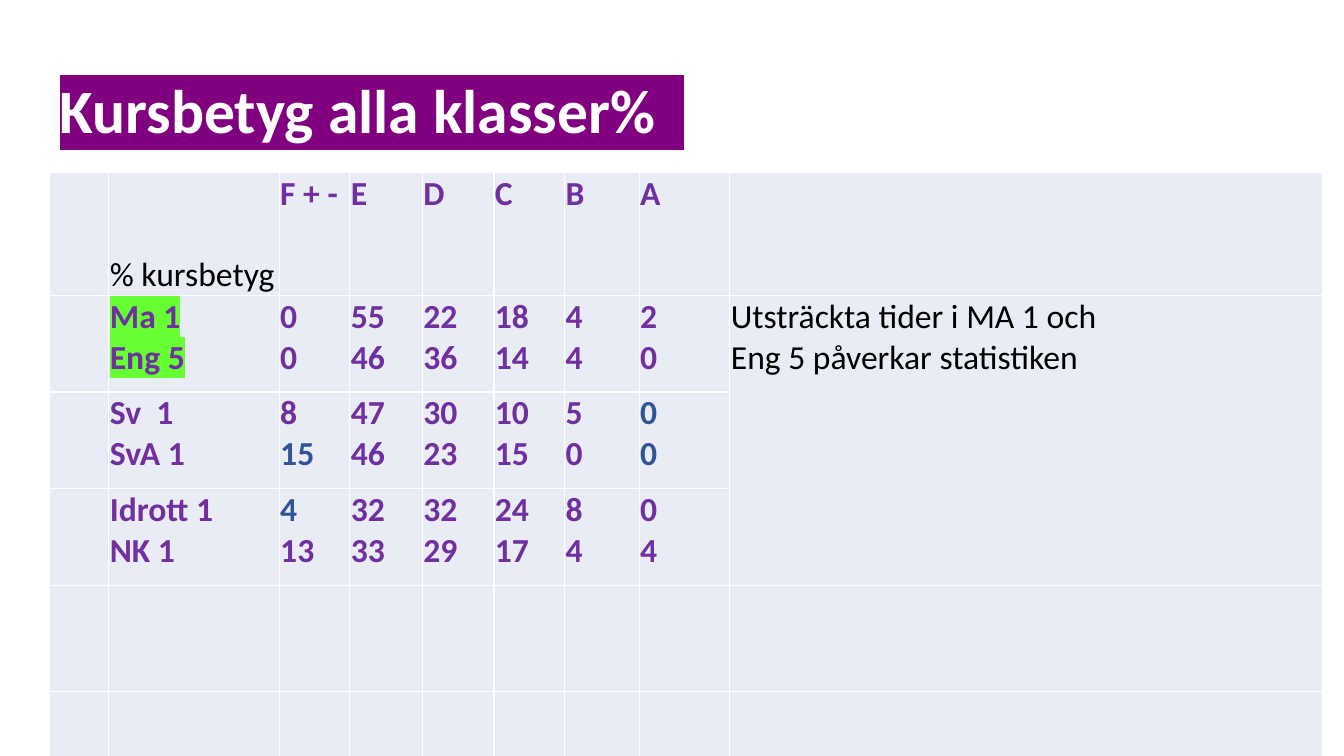
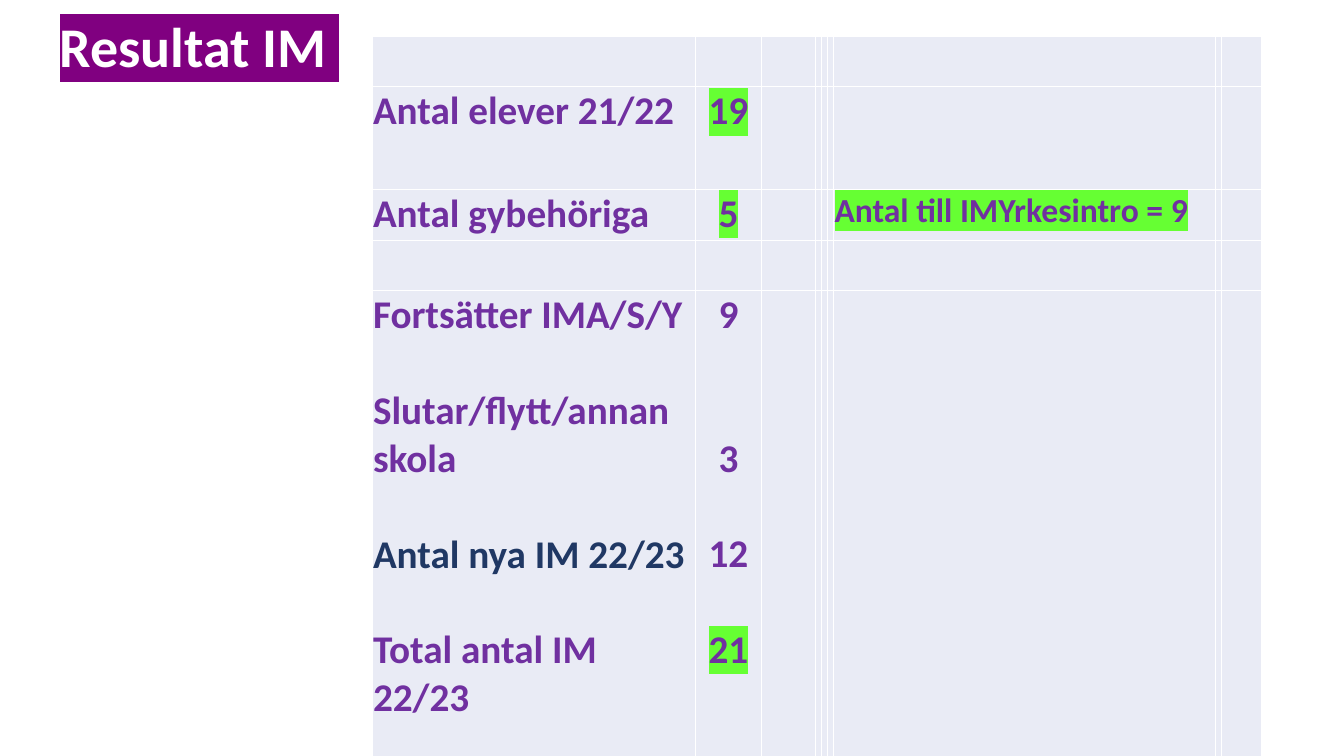
from dataclasses import dataclass
from functools import partial

from lxml import etree
from pptx import Presentation
from pptx.dml.color import RGBColor
from pptx.enum.text import MSO_ANCHOR, PP_ALIGN
from pptx.oxml.ns import qn
from pptx.util import Inches, Pt

FONT = "Calibri"
WHITE, BLACK = "FFFFFF", "000000"
TITLE_BAND, TITLE_GAP = "800080", "990099"
PURPLE, BLUE, NAVY = "7030A0", "2F5597", "203864"
GREEN, CELL_FILL = "66FF33", "E9EBF5"
BLANK_LINE = 34.2  # height in points of one 28 pt line


@dataclass
class Line:
    text: str
    size: float = 24
    color: str = PURPLE
    bold: bool = True
    highlight: str = ""
    align: PP_ALIGN = PP_ALIGN.LEFT
    before: float = 0


blue = partial(Line, color=BLUE)
marked = partial(Line, highlight=GREEN)
plain = partial(Line, color=BLACK, bold=False)
label = partial(Line, size=28)
count = partial(label, align=PP_ALIGN.CENTER)


def rgb(value):
    return RGBColor.from_string(value)


def add_color(parent, value):
    etree.SubElement(parent, qn("a:srgbClr"), val=value)


def add_run(p, text, size, color, bold=True, highlight=""):
    r = p.add_run()
    r.text = text
    r.font.size = Pt(size)
    r.font.bold = bold
    r.font.color.rgb = rgb(color)
    if highlight:
        add_color(etree.SubElement(r.font._element, qn("a:highlight")), highlight)
    r.font.name = FONT


def add_titled_slide(prs, top, height, size, runs):
    s = prs.slides.add_slide(prs.slide_layouts[5])
    title = s.shapes.title
    title.left, title.top = Inches(0.49), Inches(top)
    title.width, title.height = Inches(11.92), Inches(height)
    tf = title.text_frame
    tf.vertical_anchor = MSO_ANCHOR.MIDDLE
    p = tf.paragraphs[0]
    p.alignment = PP_ALIGN.LEFT
    p.line_spacing = 0.9
    for text, color in runs:
        add_run(p, text, size, color, highlight=TITLE_BAND)
    return s


def format_cell(cell):
    cell.margin_left = cell.margin_right = cell.margin_top = Inches(0.01)
    cell.margin_bottom = 0
    cell.text_frame.paragraphs[0].font.size = Pt(12)
    tc_pr = cell._tc.get_or_add_tcPr()
    for side in ("a:lnL", "a:lnR", "a:lnT", "a:lnB"):
        ln = etree.SubElement(tc_pr, qn(side), w=str(Pt(1)))
        add_color(etree.SubElement(ln, qn("a:solidFill")), WHITE)
    cell.fill.solid()
    cell.fill.fore_color.rgb = rgb(CELL_FILL)


def add_grid(s, left, top, widths, heights):
    """Add an empty table with the shared fill and borders."""
    frame = s.shapes.add_table(len(heights), len(widths), Inches(left), Inches(top),
                               Inches(sum(widths)), Inches(sum(heights)))
    table = frame.table
    table.first_row = table.horz_banding = False
    for column, width in zip(table.columns, widths):
        column.width = Inches(width)
    for row, height in zip(table.rows, heights):
        row.height = Inches(height)
    for cell in table.iter_cells():
        format_cell(cell)
    return table


def write_cell(cell, *lines):
    tf = cell.text_frame
    for i, line in enumerate(lines):
        p = tf.add_paragraph() if i else tf.paragraphs[0]
        p.alignment = line.align
        if line.before:
            p.space_before = Pt(line.before)
        for j, part in enumerate(line.text.split("\n")):
            if j:
                p.add_line_break()
            add_run(p, part, line.size, line.color, line.bold, line.highlight)


def build_grades(prs):
    s = add_titled_slide(prs, 0.4, 1.45, 44, [
        ("Kursbetyg", WHITE), (" ", TITLE_GAP), ("alla klasser%  ", WHITE)])
    table = add_grid(s, 0.49, 1.71,
                     [0.59, 1.69, 0.7, 0.72, 0.71, 0.7, 0.74, 0.9, 5.88],
                     [1.22, 0.96, 0.96, 0.96, 1.05, 0.77])
    write_cell(table.cell(0, 1), plain("% kursbetyg"))
    table.cell(0, 1).vertical_anchor = MSO_ANCHOR.BOTTOM
    for col, grade in enumerate(["F + -", "E", "D", "C", "B", "A"], 2):
        write_cell(table.cell(0, col), Line(grade))

    course_pairs = [
        [(marked("Ma 1"), 0, 55, 22, 18, 4, 2),
         (marked("Eng 5"), 0, 46, 36, 14, 4, 0)],
        [("Sv  1", 8, 47, 30, 10, 5, blue("0")),
         ("SvA 1", blue("15"), 46, 23, 15, 0, blue("0"))],
        [("Idrott 1", blue("4"), 32, 32, 24, 8, 0),
         ("NK 1", 13, 33, 29, 17, 4, 4)],
    ]
    for row, pair in enumerate(course_pairs, 1):
        for col, values in enumerate(zip(*pair), 1):
            write_cell(table.cell(row, col), *(
                v if isinstance(v, Line) else Line(str(v)) for v in values))

    note = table.cell(1, 8)
    note.merge(table.cell(3, 8))
    write_cell(note, plain("Utsträckta tider i MA 1 och \nEng 5 påverkar statistiken"))


def build_results(prs):
    s = add_titled_slide(prs, 0, 0.97, 40, [("Resultat IM ", WHITE)])
    table = add_grid(s, 3.69, 0.36,
                     [3.21, 0.65, 0.54, 0.04, 0.04, 0.04, 3.79, 0.04, 0.4],
                     [0.5, 1.02, 0.51, 0.49, 5.55, 0.21])
    write_cell(table.cell(1, 0), label("Antal elever 21/22"))
    write_cell(table.cell(1, 1), count("19", highlight=GREEN))
    write_cell(table.cell(2, 0), label("Antal gybehöriga"))
    write_cell(table.cell(2, 1), count("5", highlight=GREEN))
    write_cell(table.cell(2, 6), marked("Antal till IMYrkesintro = 9"))
    write_cell(table.cell(4, 0),
               label("Fortsätter IMA/S/Y"),
               label("Slutar/flytt/annan skola", before=BLANK_LINE),
               label("Antal nya IM 22/23", color=NAVY, before=BLANK_LINE),
               label("Total antal IM 22/23", before=BLANK_LINE))
    write_cell(table.cell(4, 1),
               count("9"),
               count("3", before=2 * BLANK_LINE),
               count("12", before=BLANK_LINE),
               count("21", highlight=GREEN, before=BLANK_LINE))


def main():
    prs = Presentation()
    prs.slide_width, prs.slide_height = Inches(13.33), Inches(7.5)
    build_grades(prs)
    build_results(prs)
    prs.save("out.pptx")


if __name__ == "__main__":
    main()
